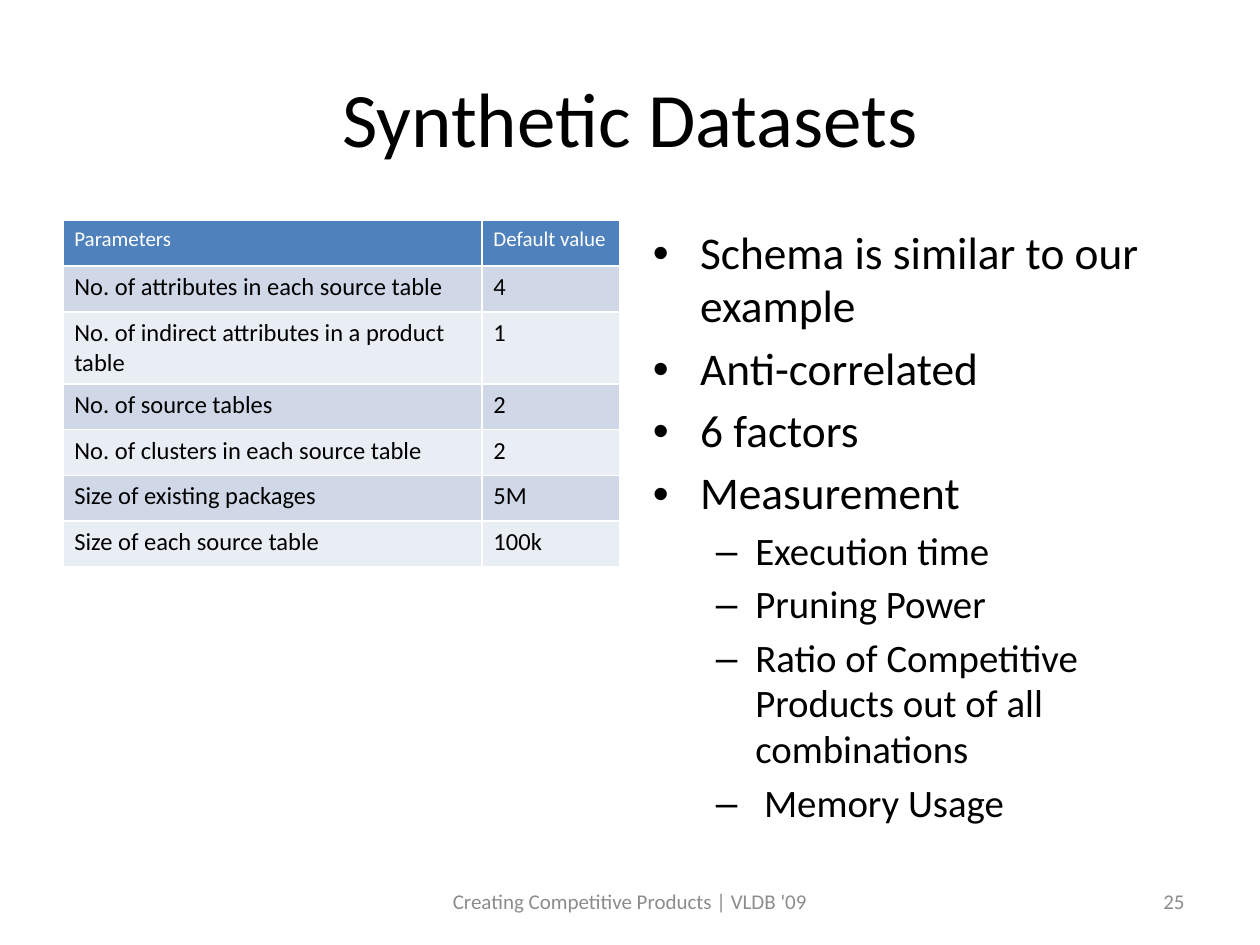
from lxml import etree
from pptx import Presentation
from pptx import util as u
from pptx.dml import color
from pptx.enum import text
from pptx.oxml import ns

COLORS = {"text": "000000", "header": "4F81BD", "header_text": "FFFFFF",
          "odd_row": "D0D8E8", "even_row": "E9EDF4", "footer": "8C8C8C"}
PARAMETERS = [
    ("Parameters", "Default value"),
    ("No. of attributes in each source table", "4"),
    ("No. of indirect attributes in a product table", "1"),
    ("No. of source tables", "2"),
    ("No. of clusters in each source table", "2"),
    ("Size of existing packages", "5M"),
    ("Size of each source table", "100k"),
]
POINTS = [
    (0, "Schema is similar to our example"),
    (0, "Anti-correlated"),
    (0, "6 factors"),
    (0, "Measurement"),
    (1, "Execution time"),
    (1, "Pruning Power"),
    (1, "Ratio of Competitive Products out of all combinations"),
    (1, " Memory Usage"),
]
LEVELS = [("•", 25.9, 27, 27, 5.2), ("–", 22.2, 58.5, 22.5, 4.5)]


class SlideBuilder:
    font = "Calibri"

    def __init__(self, deck):
        self.page = deck.slides.add_slide(deck.slide_layouts[5])

    def style(self, para, size, shade, align=text.PP_ALIGN.LEFT):
        para.alignment = align
        for span in para.runs:
            span.font.name = self.font
            span.font.size = u.Pt(size)
            span.font.bold = False
            span.font.color.rgb = color.RGBColor.from_string(COLORS[shade])

    def title(self, words, left, top, width, height):
        box = self.page.shapes.title
        box.left, box.top, box.width, box.height = map(u.Pt, (left, top, width, height))
        box.text_frame.text = words
        box.text_frame.vertical_anchor = text.MSO_ANCHOR.MIDDLE
        self.style(box.text_frame.paragraphs[0], 44, "text", text.PP_ALIGN.CENTER)

    def text_box(self, left, top, width, height):
        box = self.page.shapes.add_textbox(*map(u.Pt, (left, top, width, height)))
        box.text_frame.word_wrap = True
        return box.text_frame

    def footer(self, words, left, width, align):
        frame = self.text_box(left, 500.5, width, 28.75)
        frame.vertical_anchor = text.MSO_ANCHOR.MIDDLE
        frame.text = words
        self.style(frame.paragraphs[0], 12, "footer", align)

    def bullets(self, points, left, top, width, height):
        frame = self.text_box(left, top, width, height)
        frame.text = "\n".join(words for _, words in points)
        for para, (level, _) in zip(frame.paragraphs, points):
            mark, size, margin, hanging, gap = LEVELS[level]
            para.level = level
            para.space_before = u.Pt(gap)
            para.line_spacing = 0.98
            self.style(para, size, "text")
            properties = para._p.get_or_add_pPr()
            properties.set("marL", str(u.Pt(margin)))
            properties.set("indent", str(-u.Pt(hanging)))
            etree.SubElement(properties, ns.qn("a:buFont")).set("typeface", "Arial")
            etree.SubElement(properties, ns.qn("a:buChar")).set("char", mark)

    def table(self, rows, left, top, widths, row_height):
        table = self.page.shapes.add_table(
            len(rows), len(widths), u.Pt(left), u.Pt(top),
            u.Pt(sum(widths)), u.Pt(row_height * len(rows))).table
        for column, width in zip(table.columns, widths):
            column.width = u.Pt(width)
        for i, row in enumerate(rows):
            fill = "header" if i == 0 else "odd_row" if i % 2 else "even_row"
            size, shade = (12, "header_text") if i == 0 else (14, "text")
            for j, words in enumerate(row):
                cell = table.cell(i, j)
                cell.text = words
                cell.margin_left = cell.margin_right = u.Pt(6.5)
                cell.fill.solid()
                cell.fill.fore_color.rgb = color.RGBColor.from_string(COLORS[fill])
                self.style(cell.text_frame.paragraphs[0], size, shade)


def main():
    deck = Presentation()
    deck.slide_width, deck.slide_height = u.Pt(720), u.Pt(540)
    builder = SlideBuilder(deck)
    builder.title("Synthetic Datasets", 36, 21.6, 648, 90)
    builder.table(PARAMETERS, 36, 126, (239.5, 78.5), 26.1)
    builder.bullets(POINTS, 366, 126, 318, 356.4)
    builder.footer("25", 516, 168, text.PP_ALIGN.RIGHT)
    builder.footer("Creating Competitive Products | VLDB '09", 246, 228, text.PP_ALIGN.CENTER)
    deck.save("out.pptx")


if __name__ == "__main__":
    main()
